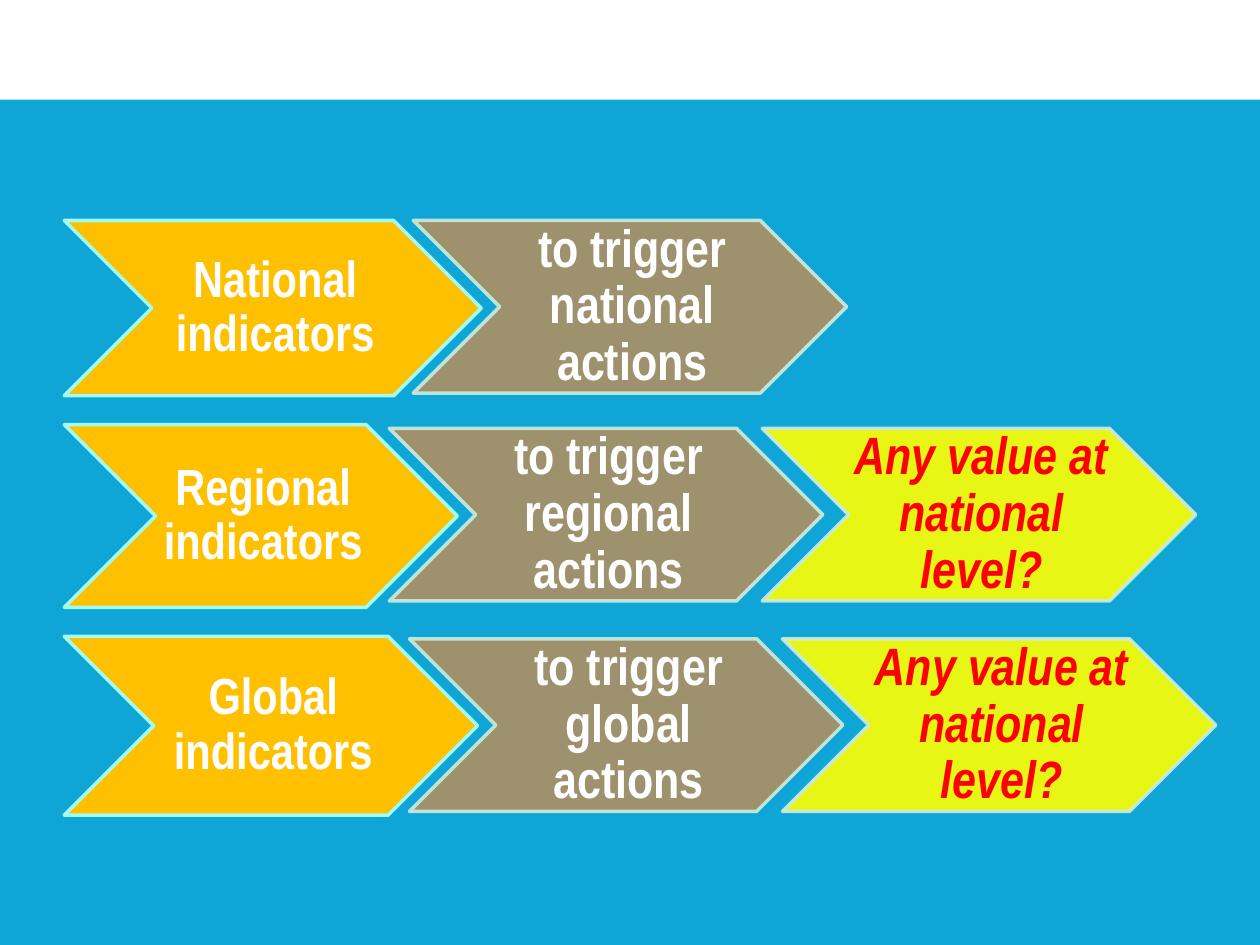
from lxml import etree
from pptx import Presentation, util as u
from pptx.dml import color
from pptx.enum import shapes, text
from pptx.oxml import ns


def rgb(code):
    return color.RGBColor.from_string(code)


def write(words, box, size=30, ink="FFFFFF", slant=False):
    frame = sld.shapes.add_textbox(*map(u.Inches, box)).text_frame
    frame.word_wrap = True
    frame.vertical_anchor = text.MSO_ANCHOR.MIDDLE
    frame.margin_left, frame.margin_right = u.Inches(0.04), 0
    frame.margin_top = frame.margin_bottom = u.Inches(0.02)
    para = frame.paragraphs[0]
    para.alignment = text.PP_ALIGN.CENTER
    para.line_spacing = 0.9
    run = para.add_run()
    run.text = words
    font = run.font
    font.name, font.size = "Arial Narrow", u.Pt(size)
    font.bold, font.italic = True, slant
    font.color.rgb = rgb(ink)


prs = Presentation()
prs.slide_width, prs.slide_height = u.Inches(10), u.Inches(7.5)
sld = prs.slides.add_slide(prs.slide_layouts[6])

# Blue ground with a white band on top
sld.background.fill.solid()
sld.background.fill.fore_color.rgb = rgb("0FA6D7")
band = sld.shapes.add_shape(shapes.MSO_SHAPE.RECTANGLE, 0, 0,
                            prs.slide_width, u.Inches(0.79))
band.shadow.inherit = False
band.fill.solid()
band.fill.fore_color.rgb = rgb("FFFFFF")
band.line.fill.background()

# Looks: fill, line, opacity in percent, text format
lead = ("FFC000", "A2FCF1", 100, dict(size=29))
act = ("AE8F62", "CCECDE", 90, {})
ask = ("FFFF00", "CCECDE", 90, dict(ink="FF0000", slant=True))

# Rows: lead top, width, height; top and left of the actions; scope; question
rows = [
    (1.75, 3.31, 1.39, 1.75, 3.28, "National", False),
    (3.37, 3.12, 1.45, 3.40, 3.09, "Regional", True),
    (5.05, 3.28, 1.42, 5.07, 3.25, "Global", True),
]
wide, high, step = 3.44, 1.37, 2.96

for top, width, height, y, x, scope, asks in rows:
    steps = [
        (f"{scope} indicators", (0.51, top, width, height), lead),
        (f"to trigger {scope.lower()} actions", (x, y, wide, high), act),
    ]
    if asks:
        steps.append(("Any value at national level?",
                      (x + step, y, wide, high), ask))

    for words, box, (fill, edge, solid, style) in steps:
        # Chevron
        chev = sld.shapes.add_shape(shapes.MSO_SHAPE.CHEVRON,
                                    *map(u.Inches, box))
        chev.shadow.inherit = False
        chev.fill.solid()
        chev.fill.fore_color.rgb = rgb(fill)
        chev.line.color.rgb = rgb(edge)
        chev.line.width = u.Pt(2)
        etree.SubElement(chev.line._get_or_add_ln(), ns.qn("a:round"))
        if solid < 100:
            for tint in chev._element.spPr.iter(ns.qn("a:srgbClr")):
                etree.SubElement(tint, ns.qn("a:alpha"), val=str(solid * 1000))

        # Label between the notch and the point
        left, rise, span, tall = box
        write(words, (left + tall / 2, rise, span - tall, tall), **style)

prs.save("out.pptx")
